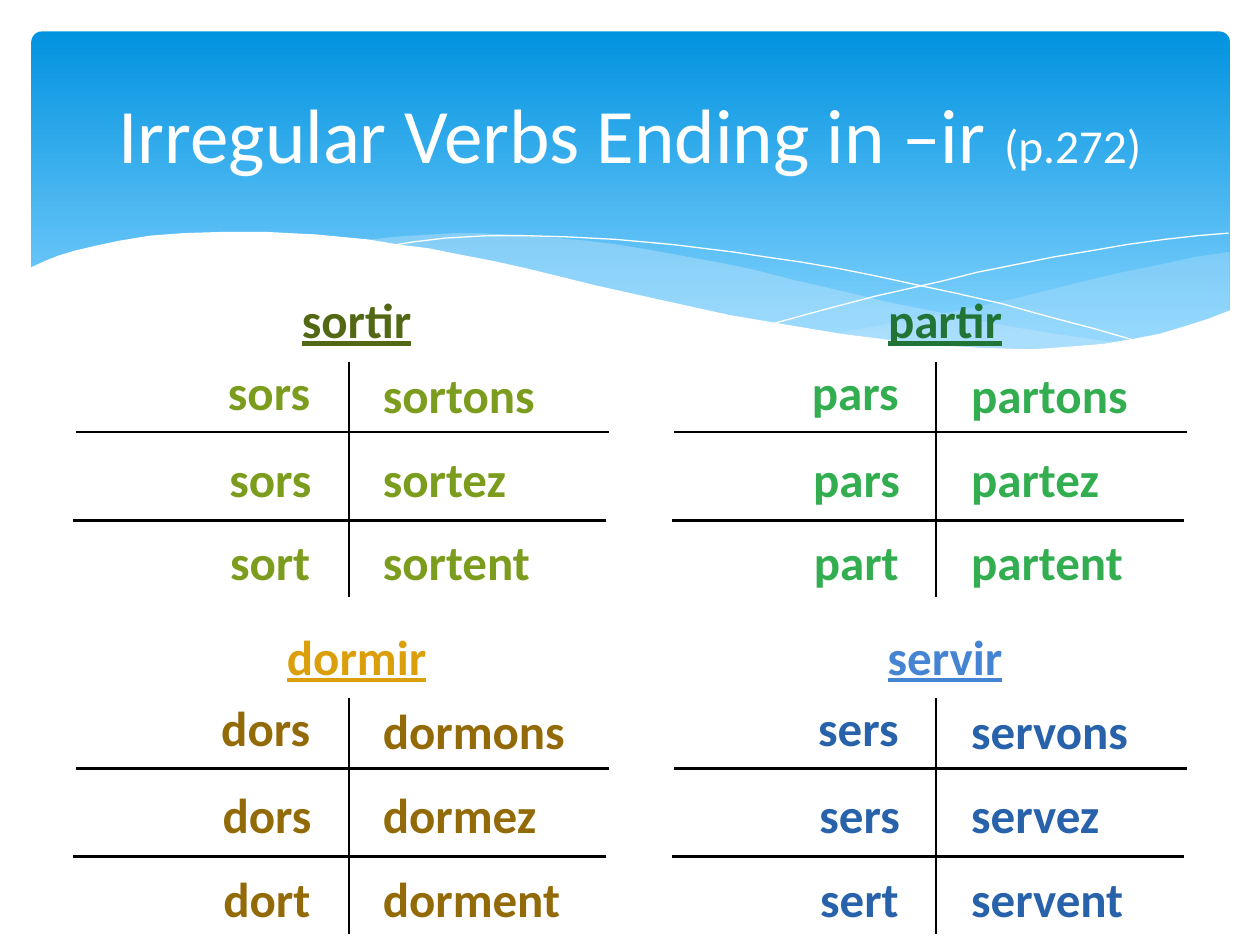
from dataclasses import dataclass

from lxml.etree import SubElement
from pptx import Presentation
from pptx.dml.color import RGBColor
from pptx.enum.shapes import MSO_CONNECTOR, MSO_SHAPE
from pptx.enum.text import MSO_ANCHOR, MSO_AUTO_SIZE, PP_ALIGN
from pptx.oxml.ns import qn
from pptx.util import Emu, Pt

PX = 9144  # one px is a hundredth of an inch
FONT = "Calibri"
WHITE = RGBColor(0xFF, 0xFF, 0xFF)
BLACK = RGBColor(0, 0, 0)
SKY_TOP = RGBColor(0x02, 0x93, 0xE0)
SKY_BOTTOM = RGBColor(0x83, 0xD3, 0xFE)
WAVE = RGBColor(0xC6, 0xE7, 0xFC)
OLIVE_DARK, OLIVE = RGBColor(0x52, 0x68, 0x14), RGBColor(0x7C, 0x9C, 0x1E)
GREEN_DARK, GREEN = RGBColor(0x21, 0x74, 0x36), RGBColor(0x32, 0xAE, 0x51)
GOLD, BROWN = RGBColor(0xDC, 0x9F, 0x0C), RGBColor(0x93, 0x6A, 0x08)
BLUE, BLUE_DARK = RGBColor(0x45, 0x84, 0xD3), RGBColor(0x28, 0x62, 0xAA)

Points = list[tuple[int, int]]

RIGHT_WAVE: Points = [
    (975, 200), (948, 204), (921, 210), (891, 216), (861, 223), (805, 237),
    (753, 248), (706, 257), (661, 265), (691, 269), (719, 272), (745, 275),
    (769, 277), (803, 278), (835, 277), (863, 275), (889, 272), (913, 267),
    (935, 262), (949, 257), (963, 252), (976, 247), (976, 200),
]
LONG_WAVE: Points = [
    (893, 273), (866, 269), (837, 265), (807, 260), (775, 254), (741, 247),
    (706, 240), (668, 231), (629, 222), (598, 214), (569, 208), (541, 203),
    (514, 198), (489, 194), (465, 191), (442, 189), (420, 187), (399, 186),
    (380, 185), (361, 185), (344, 186), (313, 188), (286, 191), (323, 196),
    (362, 203), (404, 211), (449, 222), (491, 232), (530, 240), (566, 248),
    (601, 255), (634, 261), (665, 266), (695, 270), (722, 274), (748, 276),
    (773, 277), (796, 278), (828, 278), (857, 277), (876, 275),
]
FALLING_LINE: Points = [
    (309, 195), (328, 192), (353, 189), (387, 187), (416, 187), (450, 188),
    (489, 190), (533, 194), (582, 200), (608, 204), (636, 208), (665, 213),
    (695, 219), (727, 226), (760, 233), (795, 241), (831, 251), (869, 261),
    (907, 272),
]
RISING_LINE: Points = [
    (613, 257), (653, 246), (695, 235), (748, 223), (776, 216), (806, 210),
    (836, 204), (866, 199), (895, 194), (924, 190), (951, 187), (975, 185),
]
WHITE_WAVE: Points = [
    (977, 246), (959, 253), (940, 259), (920, 265), (899, 269), (875, 273),
    (850, 275), (823, 277), (809, 277), (778, 276), (744, 274), (708, 270),
    (668, 265), (626, 258), (579, 250), (529, 239), (475, 227), (418, 213),
    (391, 207), (365, 202), (340, 197), (316, 194), (292, 190), (271, 188),
    (250, 186), (230, 185), (211, 184), (177, 184), (146, 185), (119, 187),
    (95, 191), (76, 195), (59, 199), (46, 203), (36, 207), (23, 213),
    (23, 329), (977, 329),
]


@dataclass(frozen=True)
class Column:
    shift: int
    bar_x: int
    rule_x: int
    rule_w: int


@dataclass(frozen=True)
class Verb:
    column: Column
    shift_y: int
    infinitive: str
    singular: tuple[str, str, str]
    plural: tuple[str, str, str]
    head_color: RGBColor
    color: RGBColor


@dataclass(frozen=True)
class Cell:
    x: int
    y: int
    w: int


LEFT = Column(0, 277, 60, 423)
RIGHT = Column(467, 743, 535, 407)
LOWER = 267
HEAD_CELL = Cell(158, 225, 250)
SINGULAR_CELLS = (Cell(33, 282, 223), Cell(50, 351, 207), Cell(-42, 417, 298))
PLURAL_CELLS = (Cell(294, 284, 314), Cell(294, 351, 314), Cell(294, 417, 397))

VERBS = (
    Verb(LEFT, LOWER, "dormir", ("dors", "dors", "dort"),
         ("dormons", "dormez", "dorment"), GOLD, BROWN),
    Verb(RIGHT, LOWER, "servir", ("sers", "sers", "sert"),
         ("servons", "servez", "servent"), BLUE, BLUE_DARK),
    Verb(LEFT, 0, "sortir", ("sors", "sors", "sort"),
         ("sortons", "sortez", "sortent"), OLIVE_DARK, OLIVE),
    Verb(RIGHT, 0, "partir", ("pars", "pars", "part"),
         ("partons", "partez", "partent"), GREEN_DARK, GREEN),
)


def px(n: int) -> Emu:
    return Emu(n * PX)


def add_outline(s, points: Points, closed: bool):
    builder = s.shapes.build_freeform(*points[0], scale=PX)
    builder.add_line_segments(points[1:], close=closed)
    sp = builder.convert_to_shape()
    sp.shadow.inherit = False
    return sp


def add_wave(s, points: Points, color: RGBColor, opacity: int = 100) -> None:
    sp = add_outline(s, points, True)
    sp.fill.solid()
    sp.fill.fore_color.rgb = color
    sp.line.fill.background()
    if opacity < 100:
        clr = sp.fill._xPr.find(qn("a:solidFill"))[0]
        SubElement(clr, qn("a:alpha")).set("val", str(opacity * 1000))


def add_curve(s, points: Points) -> None:
    sp = add_outline(s, points, False)
    sp.fill.background()
    sp.line.color.rgb = WHITE
    sp.line.width = Pt(0)


def add_banner(s) -> None:
    sp = s.shapes.add_shape(MSO_SHAPE.ROUNDED_RECTANGLE,
                            px(25), px(25), px(951), px(270))
    sp.adjustments[0] = 0.03
    sp.shadow.inherit = False
    sp.line.fill.background()
    sp.fill.gradient()
    sp.fill.gradient_angle = 270
    stops = zip(sp.fill.gradient_stops, (0, 0.9), (SKY_TOP, SKY_BOTTOM))
    for stop, position, color in stops:
        stop.position = position
        stop.color.rgb = color


def add_title(s) -> None:
    sp = s.shapes.add_textbox(px(50), px(37), px(900), px(137))
    tf = sp.text_frame
    tf.word_wrap = True
    tf.vertical_anchor = MSO_ANCHOR.MIDDLE
    p = tf.paragraphs[0]
    p.alignment = PP_ALIGN.CENTER
    for text, size in (("Irregular Verbs Ending in –ir ", 44), ("(p.272)", 27)):
        r = p.add_run()
        r.text = text
        r.font.name, r.font.size = FONT, Pt(size)
        r.font.color.rgb = WHITE


def add_line(s, x1: int, y1: int, x2: int, y2: int) -> None:
    line = s.shapes.add_connector(MSO_CONNECTOR.STRAIGHT,
                                  px(x1), px(y1), px(x2), px(y2))
    line.line.color.rgb = BLACK
    line.line.width = Pt(1.5)
    SubElement(line._element.spPr, qn("a:effectLst"))


def add_word(s, verb: Verb, cell: Cell, text: str, align: PP_ALIGN,
             color: RGBColor, underline: bool = False) -> None:
    sp = s.shapes.add_textbox(px(cell.x + verb.column.shift),
                              px(cell.y + verb.shift_y), px(cell.w), px(57))
    tf = sp.text_frame
    tf.word_wrap = True
    tf.auto_size = MSO_AUTO_SIZE.SHAPE_TO_FIT_TEXT
    tf.text = text
    p = tf.paragraphs[0]
    p.alignment = align
    font = p.runs[0].font
    font.name, font.size, font.bold = FONT, Pt(28), True
    font.color.rgb = color
    if underline:
        font.underline = True


def add_verb(s, verb: Verb) -> None:
    """Draw the infinitive over its ruled two-column conjugation."""
    col, dy = verb.column, verb.shift_y
    add_line(s, col.bar_x, 287 + dy, col.bar_x, 474 + dy)
    for x, y in ((col.rule_x, 343 + dy), (col.rule_x - 2, 413 + dy)):
        add_line(s, x, y, x + col.rule_w, y)
    add_word(s, verb, HEAD_CELL, verb.infinitive, PP_ALIGN.CENTER,
             verb.head_color, underline=True)
    for cells, words, align in (
            (SINGULAR_CELLS, verb.singular, PP_ALIGN.RIGHT),
            (PLURAL_CELLS, verb.plural, PP_ALIGN.LEFT)):
        for cell, word in zip(cells, words):
            add_word(s, verb, cell, word, align, verb.color)


def main() -> None:
    prs = Presentation()
    prs.slide_width, prs.slide_height = px(1000), px(750)
    s = prs.slides.add_slide(prs.slide_layouts[6])
    add_banner(s)
    add_wave(s, RIGHT_WAVE, WAVE, 29)
    add_wave(s, LONG_WAVE, WAVE, 40)
    add_curve(s, FALLING_LINE)
    add_curve(s, RISING_LINE)
    add_wave(s, WHITE_WAVE, WHITE)
    add_title(s)
    for verb in VERBS:
        add_verb(s, verb)
    prs.save("out.pptx")


if __name__ == "__main__":
    main()
